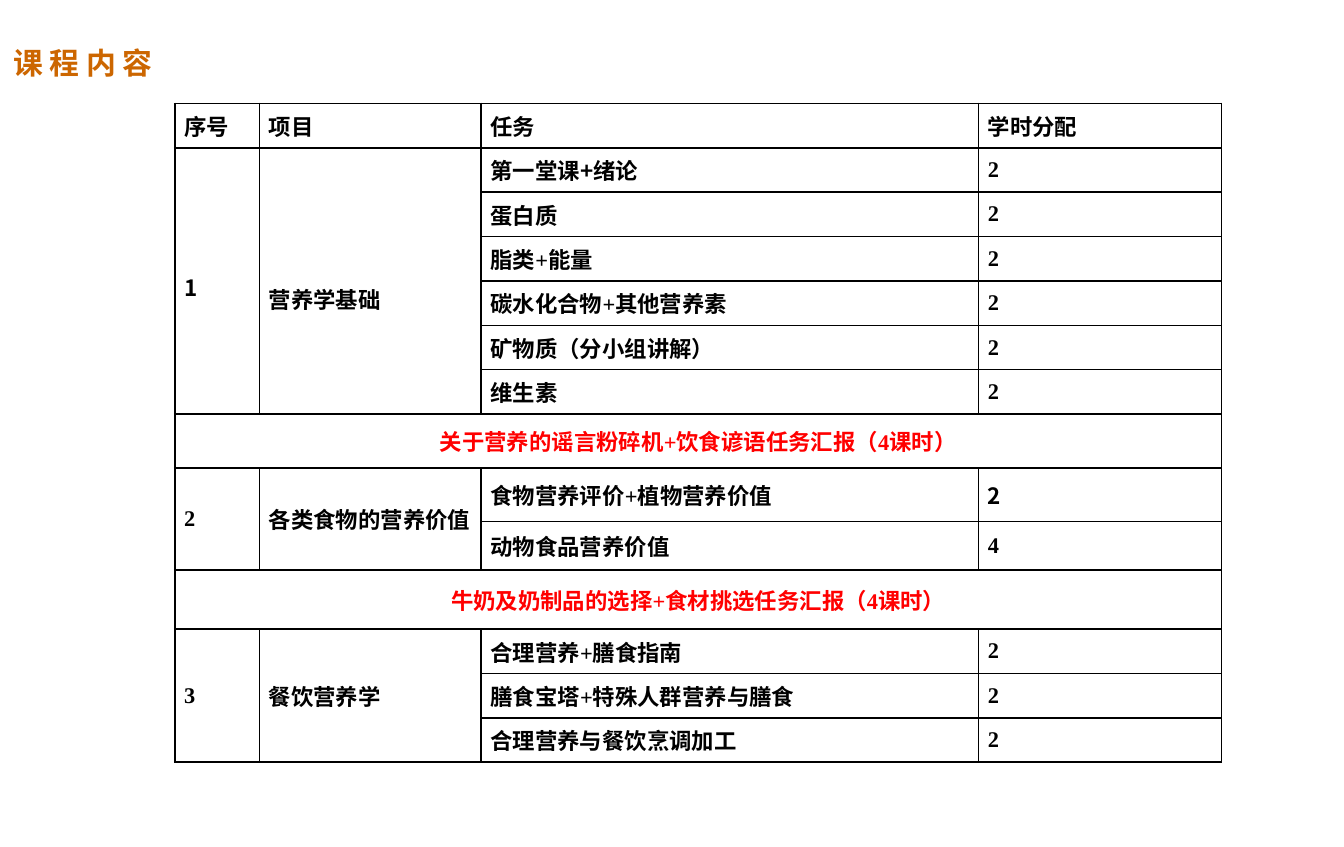
from lxml import etree
from pptx import Presentation
from pptx.dml.color import RGBColor
from pptx.enum.text import MSO_ANCHOR, MSO_AUTO_SIZE, PP_ALIGN
from pptx.oxml.ns import qn
from pptx.util import Inches, Pt

TOP, MIDDLE = MSO_ANCHOR.TOP, MSO_ANCHOR.MIDDLE
NO_FIT = MSO_AUTO_SIZE.NONE
LEFT, CENTER, JUSTIFY = PP_ALIGN.LEFT, PP_ALIGN.CENTER, PP_ALIGN.JUSTIFY
SANS, SERIF = "Noto Sans CJK SC", "Times New Roman"
BLACK, RED, ORANGE = "000000", "FF0000", "CC6600"


def add_run(p, text, size, color, font):
    r = p.add_run()
    r.text = text
    r.font.size = Pt(size)
    r.font.bold = True
    r.font.name = font
    r.font.color.rgb = RGBColor.from_string(color)
    etree.SubElement(r.font._element, qn("a:ea"), typeface=SANS)


def add_borders(cell):
    tcPr = cell._tc.get_or_add_tcPr()
    for i, side in enumerate("LRTB"):
        ln = etree.Element(qn(f"a:ln{side}"), w=str(Pt(1)))
        fill = etree.SubElement(ln, qn("a:solidFill"))
        etree.SubElement(fill, qn("a:srgbClr"), val=BLACK)
        tcPr.insert(i, ln)


prs = Presentation()
prs.slide_width, prs.slide_height = Inches(10), Inches(6.3)
s = prs.slides.add_slide(prs.slide_layouts[5])

# Title
title = s.shapes.title
title.left, title.top = Inches(0), Inches(0.31)
title.width, title.height = Inches(4.5), Inches(0.56)
tf = title.text_frame
tf.auto_size = NO_FIT
tf.vertical_anchor = TOP
p = tf.paragraphs[0]
p.alignment = LEFT
p.line_spacing = 0.9
add_run(p, "课 程 内 容", 16, ORANGE, SANS)

# Course table: None marks a cell covered by a merge
rows = [
    ("序号", "项目", "任务", "学时分配"),
    ("1", "营养学基础", "第一堂课+绪论", "2"),
    (None, None, "蛋白质", "2"),
    (None, None, "脂类+能量", "2"),
    (None, None, "碳水化合物+其他营养素", "2"),
    (None, None, "矿物质（分小组讲解）", "2"),
    (None, None, "维生素", "2"),
    ("关于营养的谣言粉碎机+饮食谚语任务汇报（4课时）", None, None, None),
    ("2", "各类食物的营养价值", "食物营养评价+植物营养价值", "2"),
    (None, None, "动物食品营养价值", "4"),
    ("牛奶及奶制品的选择+食材挑选任务汇报（4课时）", None, None, None),
    ("3", "餐饮营养学", "合理营养+膳食指南", "2"),
    (None, None, "膳食宝塔+特殊人群营养与膳食", "2"),
    (None, None, "合理营养与餐饮烹调加工", "2"),
]
col_widths = [0.63, 1.65, 3.7, 1.81]
row_heights = [0.33] * 7 + [0.4, 0.4, 0.36, 0.44] + [0.33] * 3
project_spans = [(1, 6), (8, 9), (11, 13)]
report_rows = [7, 10]
sans_lead = {(1, 0): 1, (1, 2): 5, (8, 3): 1, (13, 2): 11}  # leading characters in SANS
top_margins = {(1, 0): 0.08, (1, 1): 0.26}

table = s.shapes.add_table(len(rows), len(col_widths), Inches(1.3), Inches(0.77),
                           Inches(sum(col_widths)), Inches(sum(row_heights))).table
table.first_row = table.horz_banding = False
for col, width in zip(table.columns, col_widths):
    col.width = Inches(width)
for row, height in zip(table.rows, row_heights):
    row.height = Inches(height)

for first, last in project_spans:
    for c in (0, 1):
        table.cell(first, c).merge(table.cell(last, c))
for r in report_rows:
    table.cell(r, 0).merge(table.cell(r, 3))

for r, texts in enumerate(rows):
    is_report = r in report_rows
    for c, text in enumerate(texts):
        cell = table.cell(r, c)
        cell.fill.background()
        add_borders(cell)
        cell.margin_left = cell.margin_right = Inches(0.07)
        cell.margin_top = Inches(top_margins.get((r, c), 0))
        cell.margin_bottom = 0
        cell.vertical_anchor = MIDDLE
        p = cell.text_frame.paragraphs[0]
        p.font.size = Pt(12)
        if text is None:
            continue
        p.alignment = CENTER if is_report else JUSTIFY
        lead = sans_lead.get((r, c), 0)
        for part, font in ((text[:lead], SANS), (text[lead:], SERIF)):
            if part:
                add_run(p, part, 12, RED if is_report else BLACK, font)

prs.save("out.pptx")
